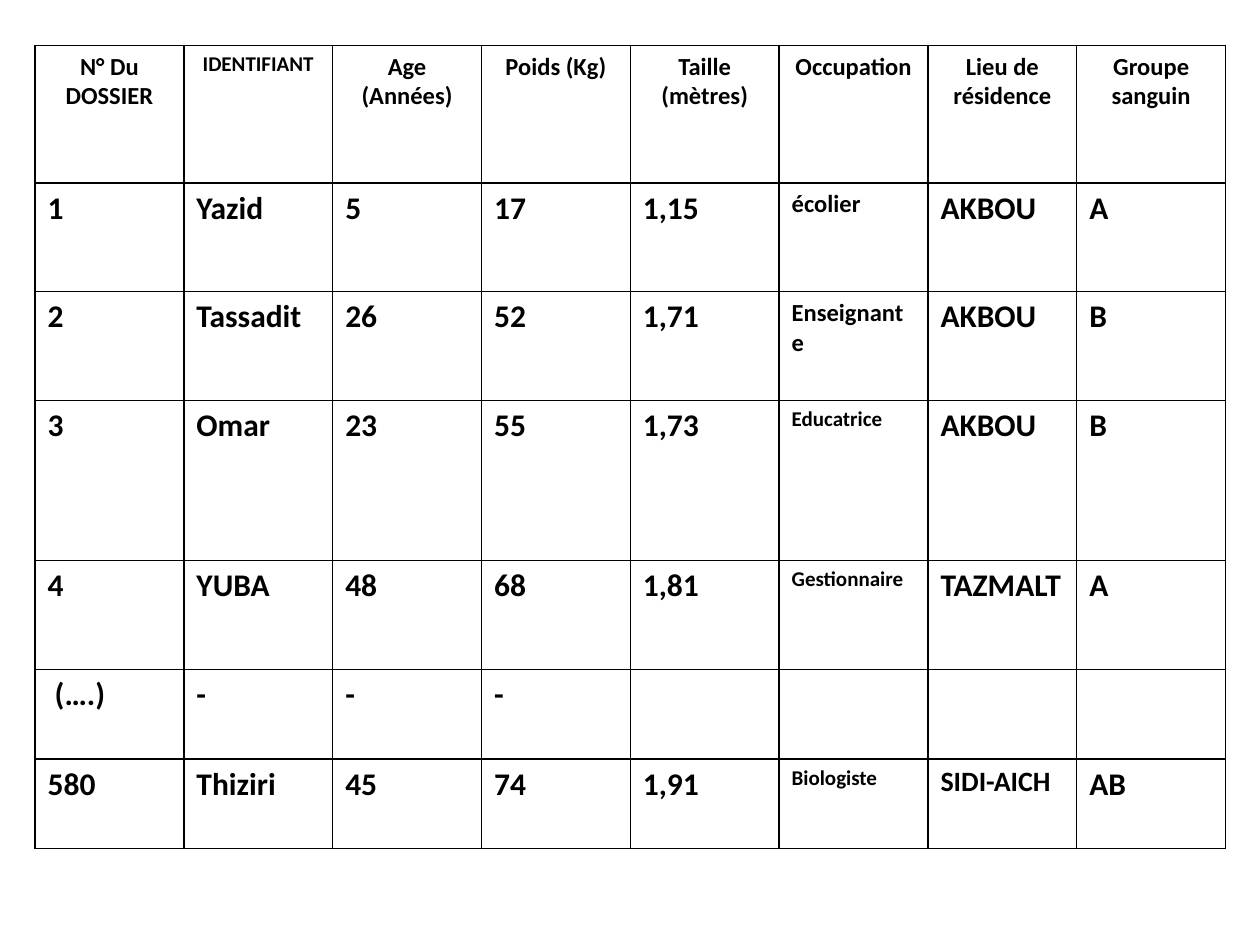
from lxml.etree import SubElement
from pptx import Presentation
from pptx.dml.color import RGBColor
from pptx.enum.text import PP_ALIGN as Align
from pptx.oxml.ns import qn
from pptx.util import Pt

HEADINGS = ["N° Du DOSSIER", "IDENTIFIANT", "Age (Années)", "Poids (Kg)",
            "Taille (mètres)", "Occupation", "Lieu de résidence", "Groupe sanguin"]
PATIENTS = [
    ["1", "Yazid", "5", "17", "1,15", "écolier", "AKBOU", "A"],
    ["2", "Tassadit", "26", "52", "1,71", "Enseignante", "AKBOU", "B"],
    ["3", "Omar", "23", "55", "1,73", "Educatrice", "AKBOU", "B"],
    ["4", "YUBA", "48", "68", "1,81", "Gestionnaire", "TAZMALT", "A"],
    [" (….)", "-", "-", "-", "", "", "", ""],
    ["580", "Thiziri", "45", "74", "1,91", "Biologiste", "SIDI-AICH", "AB"],
]
ROW_HEIGHTS = [78.5, 62.2, 62.2, 91.4, 62.2, 51.2, 51.2]
COLUMN_WIDTH = 85.05

# Text sizes that differ from the usual one of their row
HEADING_SIZE, BODY_SIZE = 14, 18
SPECIAL_SIZES = {"IDENTIFIANT": 12, "écolier": 14, "Enseignante": 14, "Educatrice": 12,
                 "Gestionnaire": 12, "Biologiste": 12, "SIDI-AICH": 16}


def color(hex_code):
    return RGBColor.from_string(hex_code)


class SlideBuilder:
    font = "Calibri"
    ink = "000000"
    paper = "FFFFFF"
    border_width = 1

    def __init__(self, slide):
        self.slide = slide

    def table(self, left, top, column_width, row_heights, rows):
        column_count = len(rows[0])
        frame = self.slide.shapes.add_table(
            len(rows), column_count, Pt(left), Pt(top),
            Pt(column_width * column_count), Pt(sum(row_heights)))
        table = frame.table
        table.first_row = table.horz_banding = False
        for column in table.columns:
            column.width = Pt(column_width)
        for row, height in zip(table.rows, row_heights):
            row.height = Pt(height)
        for row_index, texts in enumerate(rows):
            for column_index, text in enumerate(texts):
                self.cell(table.cell(row_index, column_index), text, row_index == 0)

    def cell(self, cell, text, is_heading):
        self.borders(cell)
        cell.fill.solid()
        cell.fill.fore_color.rgb = color(self.paper)
        cell.text_frame.text = text
        para = cell.text_frame.paragraphs[0]
        para.alignment = Align.CENTER if is_heading else Align.LEFT
        usual_size = HEADING_SIZE if is_heading else BODY_SIZE
        for span in para.runs:
            span.font.name = self.font
            span.font.size = Pt(SPECIAL_SIZES.get(text, usual_size))
            span.font.bold = True
            span.font.color.rgb = color(self.ink)

    def borders(self, cell):
        properties = cell._tc.get_or_add_tcPr()
        for side in ("a:lnL", "a:lnR", "a:lnT", "a:lnB"):
            line = SubElement(properties, qn(side), w=str(Pt(self.border_width)))
            fill = SubElement(line, qn("a:solidFill"))
            SubElement(fill, qn("a:srgbClr"), val=self.ink)


def main():
    deck = Presentation()
    deck.slide_width, deck.slide_height = Pt(720), Pt(540)
    page = SlideBuilder(deck.slides.add_slide(deck.slide_layouts[6]))

    # Patient records
    page.table(20, 26, COLUMN_WIDTH, ROW_HEIGHTS, [HEADINGS] + PATIENTS)

    deck.save("out.pptx")


if __name__ == "__main__":
    main()
